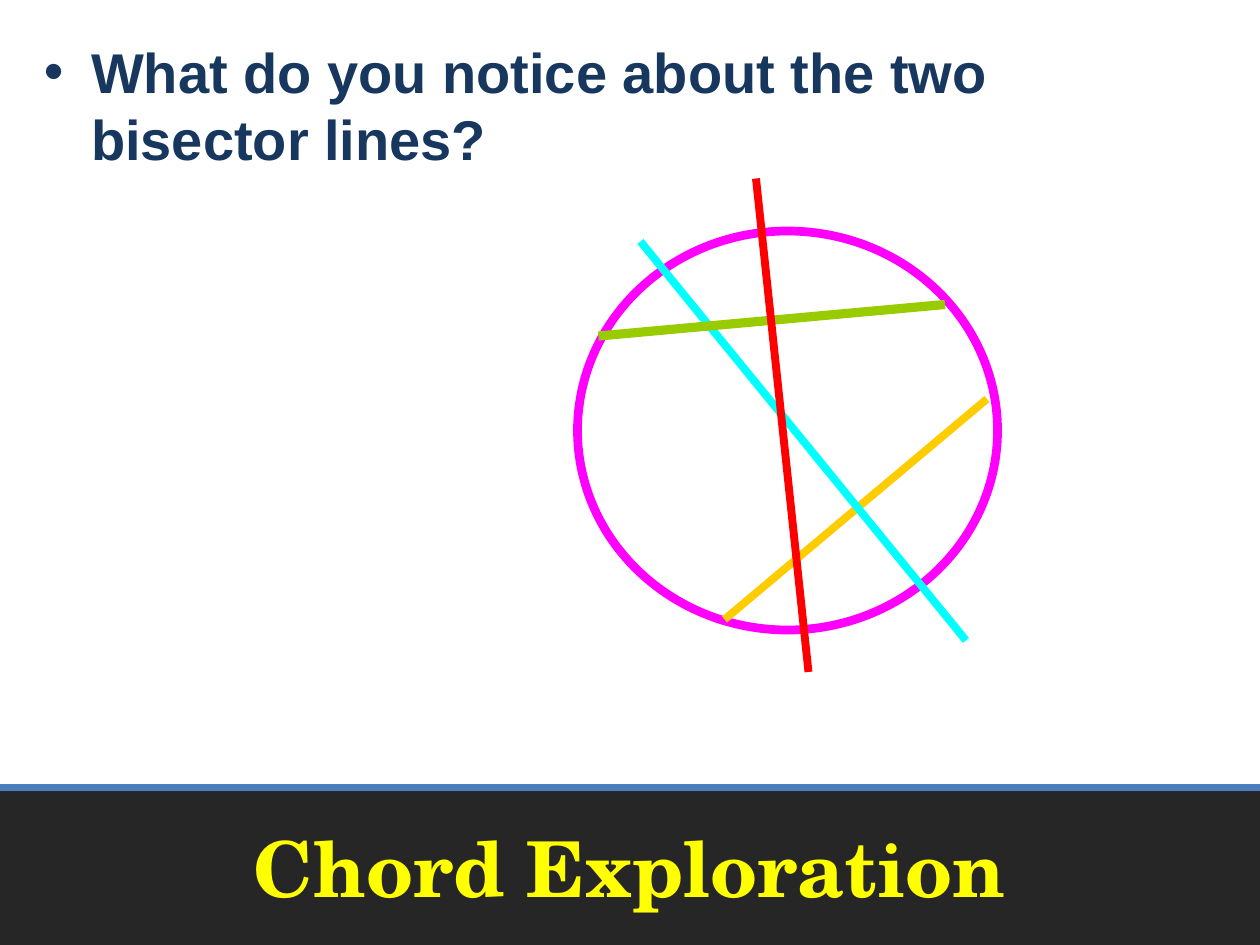
from dataclasses import dataclass
from typing import Any

from lxml import etree
from pptx import Presentation
from pptx import util as u
from pptx.dml.color import RGBColor
from pptx.enum import shapes, text
from pptx.oxml import ns

EMU_PER_PX = 7620  # 120 px to the inch


@dataclass(frozen=True)
class Theme:
    band: str = "262626"
    rule: str = "4B7EBC"
    title: str = "FFFF00"
    body: str = "17375E"
    circle: str = "FF00FF"
    upper_chord: str = "99CC00"
    lower_chord: str = "FFCC00"
    upper_bisector: str = "FF0000"
    lower_bisector: str = "00FFFF"
    title_font: str = "TeX Gyre Schola"
    body_font: str = "Arial"
    title_size: int = 44
    body_size: int = 32


@dataclass(frozen=True)
class Segment:
    start: tuple[int, int]
    end: tuple[int, int]
    color: str
    weight: float


THEME = Theme()
WIDTH, HEIGHT, BAND_TOP, MARGIN = 1200, 900, 750, 30
RULE = Segment((0, BAND_TOP), (WIDTH, BAND_TOP), THEME.rule, 4)
CHORDS_AND_BISECTORS = [
    Segment((690, 590), (940, 380), THEME.lower_chord, 4.5),
    Segment((610, 230), (920, 610), THEME.lower_bisector, 4.5),
    Segment((570, 320), (900, 290), THEME.upper_chord, 5.25),
    Segment((720, 170), (770, 640), THEME.upper_bisector, 4.5),
]


def px(*lengths: int) -> list[u.Emu]:
    return [u.Emu(length * EMU_PER_PX) for length in lengths]


def apply_format(target: Any, values: dict[str, Any]) -> None:
    for name, value in values.items():
        setattr(target, name, value)


def style_line(line: Any, color: str, weight: float) -> None:
    line.color.rgb = RGBColor.from_string(color)
    line.width = u.Pt(weight)


def draw_segment(page: Any, segment: Segment) -> None:
    connector = page.shapes.add_connector(
        shapes.MSO_CONNECTOR.STRAIGHT, *px(*segment.start, *segment.end))
    style_line(connector.line, segment.color, segment.weight)
    etree.SubElement(connector._element.spPr, ns.qn("a:effectLst"))


def draw_band(page: Any) -> None:
    band = page.shapes.add_shape(
        shapes.MSO_SHAPE.RECTANGLE, *px(0, BAND_TOP, WIDTH, HEIGHT - BAND_TOP))
    band.shadow.inherit = False
    band.fill.solid()
    band.fill.fore_color.rgb = RGBColor.from_string(THEME.band)
    band.line.fill.background()
    draw_segment(page, RULE)


def draw_circle(page: Any) -> None:
    circle = page.shapes.add_shape(shapes.MSO_SHAPE.OVAL, *px(550, 220, 400, 380))
    circle.shadow.inherit = False
    circle.fill.background()
    style_line(circle.line, THEME.circle, 5)


def write(frame: Any, words: str, font: str, size: int, color: str) -> Any:
    apply_format(frame, {"word_wrap": True, "auto_size": text.MSO_AUTO_SIZE.NONE})
    para = frame.paragraphs[0]
    span = para.add_run()
    span.text = words
    apply_format(span.font, {"name": font, "size": u.Pt(size), "bold": True})
    span.font.color.rgb = RGBColor.from_string(color)
    return para


def add_bullet(para: Any, color: str, indent: int) -> None:
    properties = para._p.get_or_add_pPr()
    apply_format(para, {"space_before": u.Pt(6.4)})
    for name, value in {"marL": indent, "indent": -indent}.items():
        properties.set(name, str(value * EMU_PER_PX))
    bullet_color = etree.SubElement(properties, ns.qn("a:buClr"))
    etree.SubElement(bullet_color, ns.qn("a:srgbClr"), val=color)
    etree.SubElement(properties, ns.qn("a:buFont"), typeface=THEME.body_font)
    etree.SubElement(properties, ns.qn("a:buChar"), char="•")


def place_title(page: Any) -> None:
    """Move the title onto the band and in front of it."""
    title = page.shapes.title
    page.shapes._spTree.append(title._element)
    left, top, width, height = px(MARGIN, BAND_TOP, WIDTH - 2 * MARGIN, HEIGHT - BAND_TOP)
    apply_format(title, {"left": left, "top": top, "width": width, "height": height})
    title.text_frame.vertical_anchor = text.MSO_ANCHOR.MIDDLE
    para = write(title.text_frame, "Chord Exploration",
                 THEME.title_font, THEME.title_size, THEME.title)
    para.alignment = text.PP_ALIGN.CENTER


def place_question(page: Any) -> None:
    box = page.shapes.add_textbox(*px(MARGIN, MARGIN, WIDTH - 2 * MARGIN, 710))
    para = write(box.text_frame, "What do you notice about the two bisector lines?",
                 THEME.body_font, THEME.body_size, THEME.body)
    add_bullet(para, THEME.body, 45)


def main() -> None:
    deck = Presentation()
    deck.slide_width, deck.slide_height = px(WIDTH, HEIGHT)
    page = deck.slides.add_slide(deck.slide_layouts.get_by_name("Title Only"))
    draw_band(page)
    place_title(page)
    place_question(page)
    draw_circle(page)
    for segment in CHORDS_AND_BISECTORS:
        draw_segment(page, segment)
    deck.save("out.pptx")


if __name__ == "__main__":
    main()
